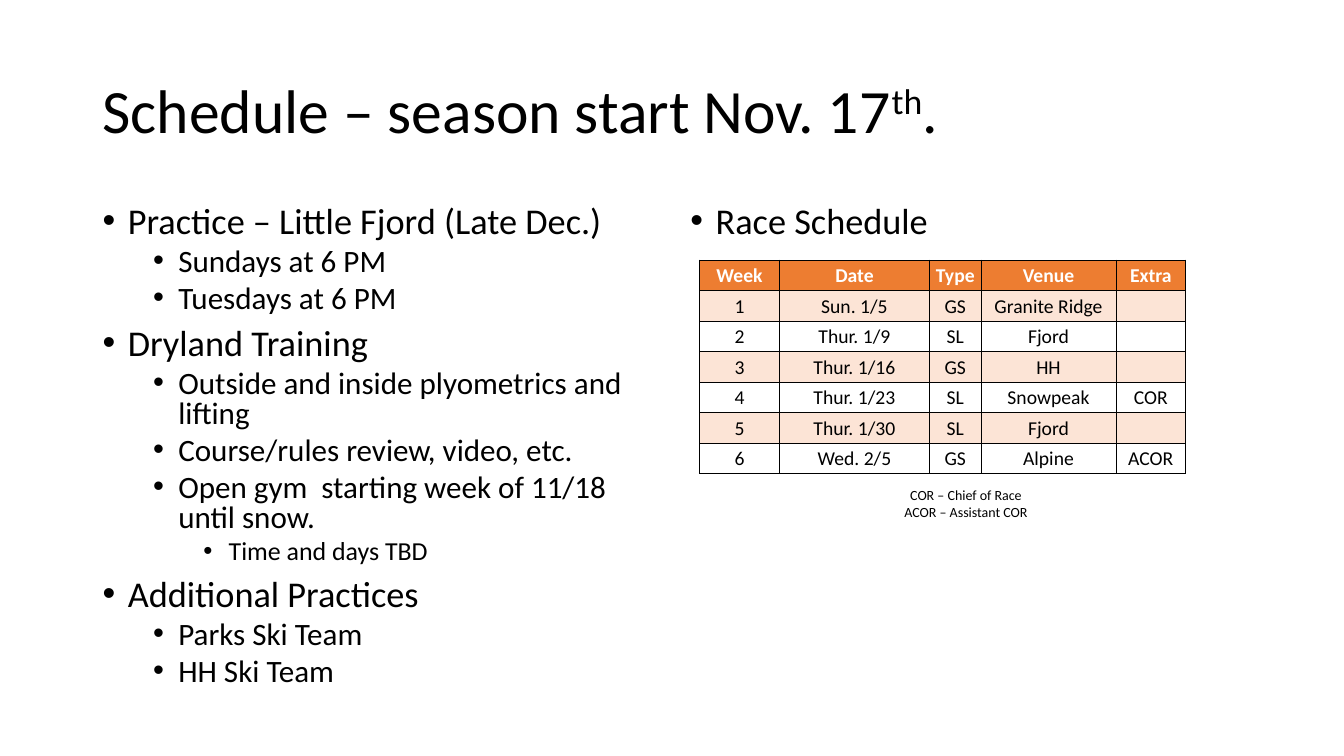
from lxml import etree
from pptx import Presentation
from pptx.dml.color import RGBColor
from pptx.enum.text import MSO_ANCHOR, PP_ALIGN
from pptx.oxml.ns import qn
from pptx.util import Inches, Pt

TOP, MIDDLE = MSO_ANCHOR.TOP, MSO_ANCHOR.MIDDLE
CENTER = PP_ALIGN.CENTER

COLORS = {"text": "000000", "header": "ED7D31", "header_text": "FFFFFF",
          "band": "FCE4D6", "border": "000000"}
BULLET_SIZES = (25.9, 22.2, 18.5)
BULLET_SPACES = (10, 5, 5)

ACTIVITIES = [
    (0, "Practice – Little Fjord (Late Dec.)"),
    (1, "Sundays at 6 PM"),
    (1, "Tuesdays at 6 PM"),
    (0, "Dryland Training"),
    (1, "Outside and inside plyometrics and lifting"),
    (1, "Course/rules review, video, etc."),
    (1, "Open gym  starting week of 11/18 until snow."),
    (2, "Time and days TBD"),
    (0, "Additional Practices"),
    (1, "Parks Ski Team"),
    (1, "HH Ski Team"),
]
RACES = [
    ("Week", "Date", "Type", "Venue", "Extra"),
    ("1", "Sun. 1/5", "GS", "Granite Ridge", ""),
    ("2", "Thur. 1/9", "SL", "Fjord", ""),
    ("3", "Thur. 1/16", "GS", "HH", ""),
    ("4", "Thur. 1/23", "SL", "Snowpeak", "COR"),
    ("5", "Thur. 1/30", "SL", "Fjord", ""),
    ("6", "Wed. 2/5", "GS", "Alpine", "ACOR"),
]
RACE_COLUMNS = (0.79, 1.49, 0.51, 1.34, 0.69)


class SlideBuilder:
    def __init__(self, slide, font="Calibri"):
        self.slide = slide
        self.font = font

    def add_run(self, paragraph, text, size, color="text", bold=False):
        run = paragraph.add_run()
        run.text = text
        run.font.name = self.font
        run.font.size = Pt(size)
        run.font.bold = bold
        run.font.color.rgb = RGBColor.from_string(COLORS[color])
        return run

    def add_text_frame(self, left, top, width, height, anchor=TOP):
        box = self.slide.shapes.add_textbox(
            Inches(left), Inches(top), Inches(width), Inches(height))
        frame = box.text_frame
        frame.word_wrap = True
        frame.vertical_anchor = anchor
        return frame

    def add_paragraphs(self, frame, count):
        return [frame.paragraphs[0]] + [frame.add_paragraph() for _ in range(count - 1)]

    def add_title(self, before, superscript, after):
        frame = self.add_text_frame(0.92, 0.4, 11.5, 1.45, MIDDLE)
        paragraph = frame.paragraphs[0]
        paragraph.line_spacing = 0.9
        self.add_run(paragraph, before, 44)
        raised = self.add_run(paragraph, superscript, 44)
        raised.font._element.set("baseline", "30000")
        self.add_run(paragraph, after, 44)

    def add_bullets(self, left, top, width, height, items):
        frame = self.add_text_frame(left, top, width, height)
        paragraphs = self.add_paragraphs(frame, len(items))
        for paragraph, (level, text) in zip(paragraphs, items):
            paragraph.level = level
            paragraph.line_spacing = 0.8
            paragraph.space_before = Pt(BULLET_SPACES[level])
            properties = paragraph._p.get_or_add_pPr()
            properties.set("marL", str(Inches(0.25 + 0.5 * level)))
            properties.set("indent", str(Inches(-0.25)))
            etree.SubElement(properties, qn("a:buFont"), typeface="Arial")
            etree.SubElement(properties, qn("a:buChar"), char="•")
            self.add_run(paragraph, text, BULLET_SIZES[level])

    def add_caption(self, left, top, width, height, lines):
        frame = self.add_text_frame(left, top, width, height)
        for paragraph, line in zip(self.add_paragraphs(frame, len(lines)), lines):
            paragraph.alignment = CENTER
            self.add_run(paragraph, line, 10)

    def add_table(self, left, top, height, column_widths, rows):
        frame = self.slide.shapes.add_table(
            len(rows), len(column_widths), Inches(left), Inches(top),
            Inches(sum(column_widths)), Inches(height))
        table = frame.table
        table.first_row = table.horz_banding = False
        for column, width in zip(table.columns, column_widths):
            column.width = Inches(width)
        for row_index, values in enumerate(rows):
            for column_index, text in enumerate(values):
                self.fill_cell(table.cell(row_index, column_index), text, row_index)

    def fill_cell(self, cell, text, row_index):
        is_header = row_index == 0
        cell.vertical_anchor = MIDDLE
        cell.margin_left = cell.margin_right = cell.margin_top = Inches(0.01)
        cell.margin_bottom = 0
        self.add_borders(cell)
        if is_header or row_index % 2:
            cell.fill.solid()
            fill_name = "header" if is_header else "band"
            cell.fill.fore_color.rgb = RGBColor.from_string(COLORS[fill_name])
        else:
            cell.fill.background()
        paragraph = cell.text_frame.paragraphs[0]
        paragraph.alignment = CENTER
        if text:
            self.add_run(paragraph, text, 14, "header_text" if is_header else "text", is_header)
        else:
            etree.SubElement(paragraph._p, qn("a:endParaRPr"), sz="1400")

    def add_borders(self, cell):
        properties = cell._tc.get_or_add_tcPr()
        for side in ("L", "R", "T", "B"):
            line = etree.SubElement(properties, qn(f"a:ln{side}"), w=str(Pt(0.5)))
            fill = etree.SubElement(line, qn("a:solidFill"))
            etree.SubElement(fill, qn("a:srgbClr"), val=COLORS["border"])


def main():
    presentation = Presentation()
    presentation.slide_width = Inches(13.33)
    presentation.slide_height = Inches(7.5)
    builder = SlideBuilder(presentation.slides.add_slide(presentation.slide_layouts[6]))

    builder.add_title("Schedule – season start Nov. 17", "th", ".")
    builder.add_bullets(0.92, 2, 5.67, 5.1, ACTIVITIES)
    builder.add_bullets(6.75, 2, 5.67, 4.76, [(0, "Race Schedule")])
    builder.add_table(6.94, 2.58, 2.12, RACE_COLUMNS, RACES)
    builder.add_caption(7.92, 4.78, 3.32, 0.44,
                        ["COR – Chief of Race", "ACOR – Assistant COR"])
    presentation.save("out.pptx")


if __name__ == "__main__":
    main()
